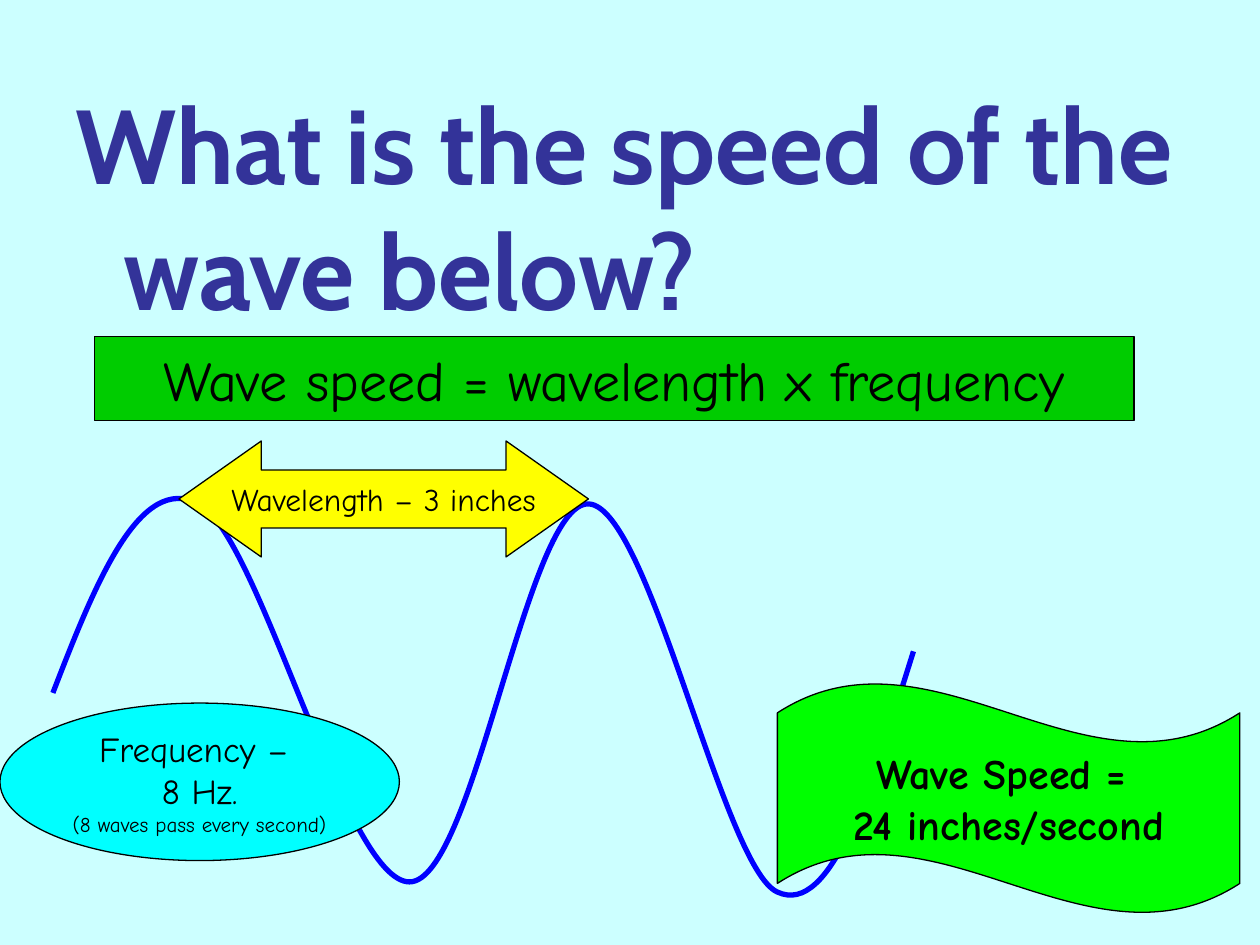
from dataclasses import dataclass

from lxml import etree
from pptx import Presentation
from pptx import util as u
from pptx.dml.color import RGBColor
from pptx.enum import shapes, text
from pptx.oxml import ns


@dataclass(frozen=True)
class Theme:
    background: str = "CCFFFF"
    heading: str = "333399"
    ink: str = "000000"
    formula: str = "00CC00"
    curve: str = "0000FF"
    wavelength: str = "FFFF00"
    frequency: str = "00FFFF"
    answer: str = "00FF00"
    heading_font: str = "Cabin"
    label_font: str = "Comic Neue"
    heading_size: int = 60
    formula_size: int = 32
    answer_size: int = 24
    frequency_size: int = 20
    wavelength_size: int = 18
    note_size: int = 12


THEME = Theme()
SHAPE = shapes.MSO_SHAPE


def rgb(value):
    return RGBColor.from_string(value)


def inches(values):
    return [u.Inches(v) for v in values]


def write(p, words, size, font=THEME.label_font, color=THEME.ink, bold=False,
          align=text.PP_ALIGN.CENTER):
    p.alignment = align
    r = p.add_run()
    r.text = words
    r.font.name, r.font.size, r.font.bold = font, u.Pt(size), bold
    r.font.color.rgb = rgb(color)


def add_label(s, kind, box, fill, lines, adjustments=(), bold=False):
    """Outlined shape with centred lines, each given as (words, size)."""
    sp = s.shapes.add_shape(kind, *inches(box))
    sp.shadow.inherit = False
    for i, value in enumerate(adjustments):
        sp.adjustments[i] = value
    sp.fill.solid()
    sp.fill.fore_color.rgb = rgb(fill)
    sp.line.color.rgb = rgb(THEME.ink)
    sp.line.width = u.Pt(0.75)
    tf = sp.text_frame
    tf.word_wrap = False
    tf.vertical_anchor = text.MSO_ANCHOR.MIDDLE
    for i, (words, size) in enumerate(lines):
        p = tf.add_paragraph() if i else tf.paragraphs[0]
        write(p, words, size, bold=bold)


def add_question(s, box):
    sp = s.placeholders[1]
    sp.left, sp.top, sp.width, sp.height = inches(box)
    tf = sp.text_frame
    tf.word_wrap = True
    tf.auto_size = text.MSO_AUTO_SIZE.NONE
    tf.vertical_anchor = text.MSO_ANCHOR.TOP
    p = tf.paragraphs[0]
    write(p, "What is the speed of the wave below?", THEME.heading_size,
          font=THEME.heading_font, color=THEME.heading, bold=True,
          align=text.PP_ALIGN.LEFT)
    p.space_before = u.Pt(0.2 * THEME.heading_size)
    # Hanging indent without a bullet
    pPr = p._p.get_or_add_pPr()
    pPr.set("marL", str(u.Inches(0.38)))
    pPr.set("indent", str(-u.Inches(0.38)))
    etree.SubElement(pPr, ns.qn("a:buNone"))


def add_wave_curve(s, box):
    """Bezier wave; points are offsets from the box's top left corner."""
    left, top, width, height = box
    offsets = [
        (0, 1.75),
        (0.34, 0.87), (0.69, 0), (1.16, 0.25),
        (1.64, 0.5), (2.32, 3.25), (2.83, 3.25),
        (3.34, 3.25), (3.76, 0.24), (4.25, 0.25),
        (4.73, 0.26), (5.32, 3.14), (5.75, 3.33),
        (6.18, height), (6.5, 2.47), (width, 1.42),
    ]
    points = [inches((left + x, top + y)) for x, y in offsets]
    builder = s.shapes.build_freeform(*points[0])
    builder.add_line_segments(points[1:], close=False)
    sp = builder.convert_to_shape()
    # Each three points become two control points and an end point
    path = sp._element.find(".//" + ns.qn("a:path"))
    segments = path.findall(ns.qn("a:lnTo"))
    for i in range(0, len(segments), 3):
        curve = etree.SubElement(path, ns.qn("a:cubicBezTo"))
        for segment in segments[i:i + 3]:
            curve.append(segment[0])
            path.remove(segment)
    sp.shadow.inherit = False
    sp.fill.background()
    sp.line.color.rgb = rgb(THEME.curve)
    sp.line.width = u.Pt(3)


def add_formula(s, box):
    add_label(s, SHAPE.RECTANGLE, box, THEME.formula,
              [("Wave speed = wavelength x frequency", THEME.formula_size)])


def add_wavelength(s, box):
    add_label(s, SHAPE.LEFT_RIGHT_ARROW, box, THEME.wavelength,
              [("Wavelength – 3 inches", THEME.wavelength_size)],
              adjustments=(0.5, 0.71))


def add_frequency(s, box):
    add_label(s, SHAPE.OVAL, box, THEME.frequency,
              [("Frequency – ", THEME.frequency_size),
               ("8 Hz.", THEME.frequency_size),
               ("(8 waves pass every second)", THEME.note_size)])


def add_answer(s, box):
    add_label(s, SHAPE.WAVE, box, THEME.answer,
              [("Wave Speed = ", THEME.answer_size),
               ("24 inches/second", THEME.answer_size)],
              adjustments=(0.13, 0), bold=True)


def main():
    prs = Presentation()
    prs.slide_width, prs.slide_height = inches((10, 7.5))
    # The question sits in the body placeholder, so the title goes
    s = prs.slides.add_slide(prs.slide_layouts[1])
    title = s.shapes.title._element
    title.getparent().remove(title)
    s.background.fill.solid()
    s.background.fill.fore_color.rgb = rgb(THEME.background)

    add_question(s, (0.5, 0.58, 9, 6.12))
    add_formula(s, (0.75, 2.67, 8.25, 0.67))
    add_wave_curve(s, (0.42, 3.75, 6.83, 3.53))
    add_wavelength(s, (1.42, 3.5, 3.25, 0.92))
    add_frequency(s, (0, 5.58, 3.17, 1.25))
    add_answer(s, (6.17, 5.42, 3.67, 1.83))
    prs.save("out.pptx")


if __name__ == "__main__":
    main()
